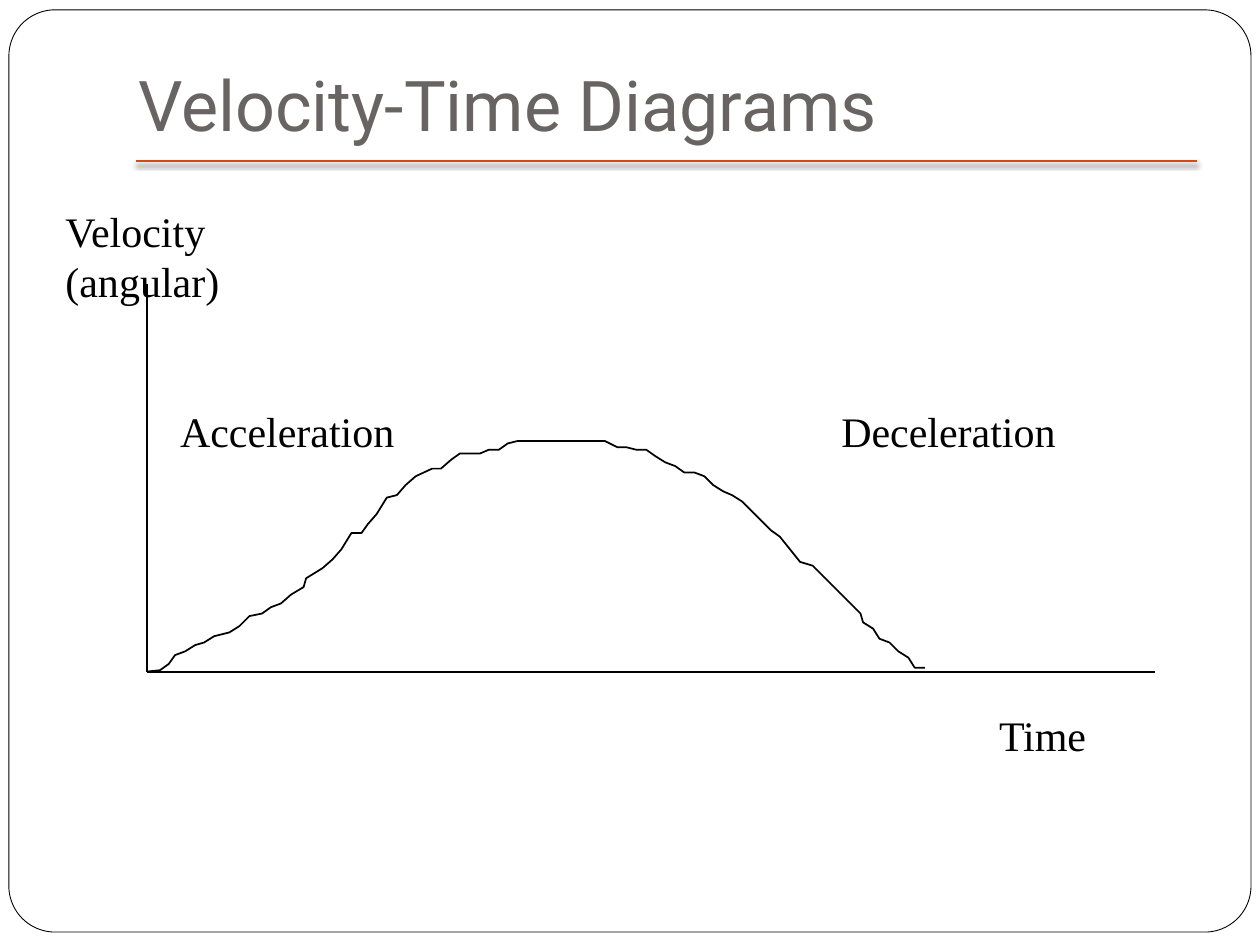
"""Build the velocity-time diagram slide."""
from dataclasses import dataclass

from lxml import etree
from pptx import Presentation
from pptx.dml.color import RGBColor
from pptx.enum import shapes, text
from pptx.oxml import ns
from pptx.util import Cm, Pt


@dataclass(frozen=True)
class Theme:
    ink: RGBColor = RGBColor(0, 0, 0)
    paper: RGBColor = RGBColor(255, 255, 255)
    heading: RGBColor = RGBColor(0x69, 0x64, 0x64)
    accent: RGBColor = RGBColor(0xD3, 0x48, 0x17)
    heading_font: str = "Roboto"
    label_font: str = "Times New Roman"
    heading_size: Pt = Pt(40)
    label_size: Pt = Pt(24)
    frame_width: Pt = Pt(0.5)
    line_width: Pt = Pt(1)


theme = Theme()


def write(box, words, font, size, color, bottom=0.13):
    frame = box.text_frame
    frame.word_wrap = True
    frame.margin_left = frame.margin_right = Cm(0.25)
    frame.margin_top, frame.margin_bottom = Cm(0.13), Cm(bottom)
    para = frame.paragraphs[0]
    para.alignment = text.PP_ALIGN.LEFT
    span = para.add_run()
    span.text = words
    span.font.name, span.font.size = font, size
    span.font.color.rgb = color
    return frame


def draw_line(page, start, end, color):
    line = page.shapes.add_connector(
        shapes.MSO_CONNECTOR.STRAIGHT, *map(Cm, start + end))
    line.line.color.rgb = color
    line.line.width = theme.line_width
    properties = line.element.find(ns.qn("p:spPr"))
    return etree.SubElement(properties, ns.qn("a:effectLst"))


deck = Presentation()
deck.slide_width, deck.slide_height = Cm(25.4), Cm(19.05)
page = deck.slides.add_slide(deck.slide_layouts[5])

title = page.shapes.title
title.left, title.top, title.width, title.height = map(Cm, (2.54, 0, 21.59, 3.18))
heading = write(title, "Velocity-Time Diagrams", theme.heading_font,
                theme.heading_size, theme.heading, bottom=0.25)
heading.vertical_anchor = text.MSO_ANCHOR.BOTTOM
heading.auto_size = text.MSO_AUTO_SIZE.NONE

border = page.shapes.add_shape(
    shapes.MSO_SHAPE.ROUNDED_RECTANGLE, *map(Cm, (0.18, 0.2, 25.04, 18.59)))
border.adjustments[0] = 0.05
border.shadow.inherit = False
border.fill.solid()
border.fill.fore_color.rgb = theme.paper
border.line.color.rgb = theme.ink
border.line.width = theme.frame_width
title.element.addprevious(border.element)

origin = (2.97, 13.54)
draw_line(page, origin, (23.29, 13.54), theme.ink)
draw_line(page, (2.97, 5.72), origin, theme.ink)

curve_points = [
    (117, 533), (127, 532), (134, 527), (139, 520), (147, 517), (155, 512),
    (162, 510), (170, 505), (182, 502), (190, 497), (198, 489), (208, 487),
    (215, 482), (223, 479), (231, 472), (241, 466), (243, 459), (256, 451),
    (264, 444), (271, 436), (279, 423), (287, 423), (292, 416), (299, 408),
    (307, 395), (315, 393), (322, 385), (330, 378), (343, 372), (350, 372),
    (358, 365), (365, 360), (381, 360), (388, 357), (396, 357), (403, 352),
    (411, 350), (480, 350), (490, 355), (497, 355), (505, 357), (513, 357),
    (520, 362), (528, 367), (536, 370), (543, 375), (551, 375), (559, 378),
    (566, 385), (574, 390), (581, 393), (589, 398), (597, 406), (604, 413),
    (612, 421), (619, 426), (627, 436), (635, 446), (645, 449), (652, 456),
    (660, 464), (668, 472), (675, 479), (683, 487), (685, 494), (693, 499),
    (698, 507), (706, 510), (713, 517), (721, 522), (726, 530), (734, 530),
]
builder = page.shapes.build_freeform(*curve_points[0], scale=Cm(2.54) / 100)
builder.add_line_segments(curve_points[1:], close=False)
curve = builder.convert_to_shape()
curve.shadow.inherit = False
curve.fill.background()
curve.line.color.rgb = theme.ink
curve.line.width = theme.line_width

labels = [
    ("Time", 19.89, 14.17, 3.4, 1.27),
    ("Velocity (angular)", 1.07, 4.01, 4.47, 2.29),
    ("Acceleration", 3.38, 8.05, 5.54, 1.27),
    ("Deceleration", 16.71, 8.05, 5.11, 1.27),
]
for words, *place in labels:
    box = page.shapes.add_textbox(*map(Cm, place))
    label = write(box, words, theme.label_font, theme.label_size, theme.ink)
    label.auto_size = text.MSO_AUTO_SIZE.SHAPE_TO_FIT_TEXT

effects = draw_line(page, (2.74, 3.25), (24.13, 3.25), theme.accent)
shadow = etree.SubElement(
    effects, ns.qn("a:outerShdw"), blurRad=str(Pt(3)), dist=str(Pt(2)),
    dir="5400000", algn="t", rotWithShape="0")
tint = etree.SubElement(shadow, ns.qn("a:srgbClr"), val=str(theme.ink))
etree.SubElement(tint, ns.qn("a:alpha"), val="50000")

deck.save("out.pptx")
